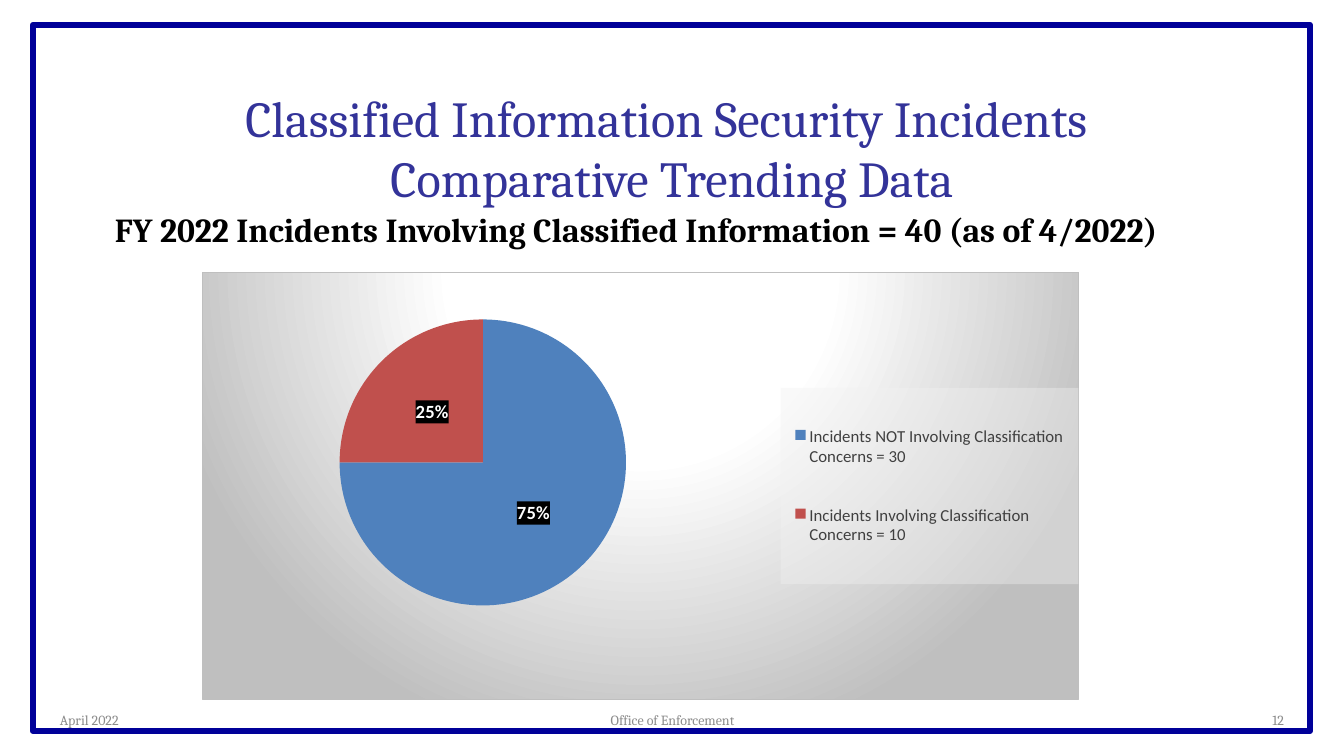
import pptx
import pptx.chart.data
import pptx.dml.color
import pptx.enum.chart
import pptx.enum.shapes
import pptx.enum.text
import pptx.oxml
import pptx.oxml.ns
import pptx.util
from dataclasses import dataclass

TITLE = ["Classified Information Security Incidents ", "Comparative Trending Data"]
SUBTITLE = ["FY 2022 Incidents Involving Classified Information =\u00a040 (as of 4/2022)"]
INCIDENTS = [
    ("Incidents NOT Involving Classification Concerns = 30", 75),
    ("Incidents Involving Classification Concerns = 10", 25),
]
FOOTER = ["April 2022", "Office of Enforcement", "12"]

# left, top, width, height in px
SLIDE_SIZE = (1344, 756)
FRAME_BOX = (33, 25, 1277, 706)
TITLE_BOX = (67, 97, 1210, 101)
SUBTITLE_BOX = (105, 198, 1106, 56)
CHART_BOX = (202, 272, 877, 428)
FOOTER_BOXES = [(50, 700, 314, 40), (460, 700, 425, 40), (980, 700, 314, 40)]

# left, top, width, height as shares of the chart
PLOT_LAYOUT = (0.02, 0.11, 0.6, 0.67)
LEGEND_LAYOUT = (0.66, 0.27, 0.34, 0.46)


@dataclass(frozen=True)
class Theme:
    heading_font: str = "Cambria"
    chart_font: str = "Calibri"
    frame: str = "000099"
    title: str = "333399"
    text: str = "000000"
    footer: str = "8C8C8C"
    legend_text: str = "404040"
    legend_fill: str = "F2F2F2"
    label_text: str = "FFFFFF"
    label_fill: str = "000000"
    chart_light: str = "FFFFFF"
    chart_dark: str = "BFBFBF"
    slices: tuple = ("4F81BD", "C0504D")
    title_size: float = 36
    subtitle_size: float = 24
    footer_size: float = 10
    chart_size: float = 10
    legend_size: float = 12
    label_size: float = 13.3


THEME = Theme()
EMU_PER_PX = 914400 / 100.8
ALIGN = pptx.enum.text.PP_ALIGN
ANCHOR = pptx.enum.text.MSO_ANCHOR
qn = pptx.oxml.ns.qn


def px(lengths):
    return [pptx.util.Emu(round(length * EMU_PER_PX)) for length in lengths]


def rgb(color):
    return pptx.dml.color.RGBColor.from_string(color)


def style_font(font, name, size, color, bold=False):
    font.name = name
    font.size = pptx.util.Pt(size)
    font.bold = bold
    font.color.rgb = rgb(color)


def add_text(slide, box, lines, size, color, align, anchor=ANCHOR.MIDDLE, bold=False):
    frame = slide.shapes.add_textbox(*px(box)).text_frame
    frame.word_wrap = True
    frame.vertical_anchor = anchor
    paragraph = frame.paragraphs[0]
    paragraph.alignment = align
    for index, line in enumerate(lines):
        if index:
            paragraph.add_line_break()
        run = paragraph.add_run()
        run.text = line
        style_font(run.font, THEME.heading_font, size, color, bold)


def chart_xml(tag, content):
    namespaces = pptx.oxml.ns.nsdecls("c", "a")
    return pptx.oxml.parse_xml(f"<c:{tag} {namespaces}>{content}</c:{tag}>")


def manual_layout(box, target=""):
    modes = '<c:xMode val="edge"/><c:yMode val="edge"/>'
    sizes = "".join(f'<c:{key} val="{share}"/>' for key, share in zip("xywh", box))
    return chart_xml("layout", f"<c:manualLayout>{target}{modes}{sizes}</c:manualLayout>")


def translucent_fill(color, percent):
    alpha = f'<a:alpha val="{percent * 1000}"/>'
    return chart_xml("spPr", f'<a:solidFill><a:srgbClr val="{color}">{alpha}</a:srgbClr></a:solidFill>')


def radial_background():
    stops = [(0, THEME.chart_light), (39, THEME.chart_light), (100, THEME.chart_dark)]
    stop_list = "".join(
        f'<a:gs pos="{position * 1000}"><a:srgbClr val="{color}"/></a:gs>' for position, color in stops
    )
    return chart_xml(
        "spPr",
        f'<a:gradFill><a:gsLst>{stop_list}</a:gsLst><a:path path="circle">'
        '<a:fillToRect l="50000" t="-80000" r="50000" b="180000"/></a:path></a:gradFill>'
        f'<a:ln w="9525"><a:solidFill><a:srgbClr val="{THEME.chart_dark}"/></a:solidFill></a:ln>',
    )


def style_legend(chart):
    chart.has_legend = True
    legend = chart.legend
    legend.position = pptx.enum.chart.XL_LEGEND_POSITION.RIGHT
    legend.include_in_layout = False
    style_font(legend.font, THEME.chart_font, THEME.legend_size, THEME.legend_text)
    overlay = legend._element.find(qn("c:overlay"))
    overlay.addprevious(manual_layout(LEGEND_LAYOUT))
    overlay.addnext(translucent_fill(THEME.legend_fill, 39))


def style_slices(series):
    for index, color in enumerate(THEME.slices):
        fill = series.points[index].format.fill
        fill.solid()
        fill.fore_color.rgb = rgb(color)
    labels = series.data_labels
    labels.show_percentage = True
    labels.show_value = False
    labels.number_format = "0%"
    labels.number_format_is_linked = False
    labels.position = pptx.enum.chart.XL_LABEL_POSITION.CENTER
    style_font(labels.font, THEME.chart_font, THEME.label_size, THEME.label_text, bold=True)
    labels._element.find(qn("c:txPr")).addprevious(translucent_fill(THEME.label_fill, 75))


def add_incident_chart(slide):
    data = pptx.chart.data.CategoryChartData()
    data.categories = [name for name, _ in INCIDENTS]
    data.add_series("Series 1", [share for _, share in INCIDENTS])
    chart = slide.shapes.add_chart(pptx.enum.chart.XL_CHART_TYPE.PIE, *px(CHART_BOX), data).chart
    chart.has_title = False
    style_font(chart.font, THEME.chart_font, THEME.chart_size, THEME.text)
    chart.plots[0].vary_by_categories = True
    style_slices(chart.plots[0].series[0])
    style_legend(chart)

    chart_space = chart._chartSpace
    chart_space.find(qn("c:txPr")).addprevious(radial_background())
    plot_area = chart_space.find(".//" + qn("c:plotArea"))
    for layout in plot_area.findall(qn("c:layout")):
        plot_area.remove(layout)
    plot_area.insert(0, manual_layout(PLOT_LAYOUT, '<c:layoutTarget val="inner"/>'))


def add_frame(slide):
    frame = slide.shapes.add_shape(pptx.enum.shapes.MSO_SHAPE.RECTANGLE, *px(FRAME_BOX))
    frame.shadow.inherit = False
    frame.fill.background()
    frame.line.color.rgb = rgb(THEME.frame)
    frame.line.width = pptx.util.Pt(4.5)


def main():
    presentation = pptx.Presentation()
    presentation.slide_width, presentation.slide_height = px(SLIDE_SIZE)
    slide = presentation.slides.add_slide(presentation.slide_layouts[6])
    add_frame(slide)
    add_text(slide, SUBTITLE_BOX, SUBTITLE, THEME.subtitle_size, THEME.text,
             ALIGN.LEFT, ANCHOR.BOTTOM, bold=True)
    add_incident_chart(slide)
    add_text(slide, TITLE_BOX, TITLE, THEME.title_size, THEME.title, ALIGN.CENTER)
    for box, text, align in zip(FOOTER_BOXES, FOOTER, (ALIGN.LEFT, ALIGN.CENTER, ALIGN.RIGHT)):
        add_text(slide, box, [text], THEME.footer_size, THEME.footer, align)
    presentation.save("out.pptx")


if __name__ == "__main__":
    main()
